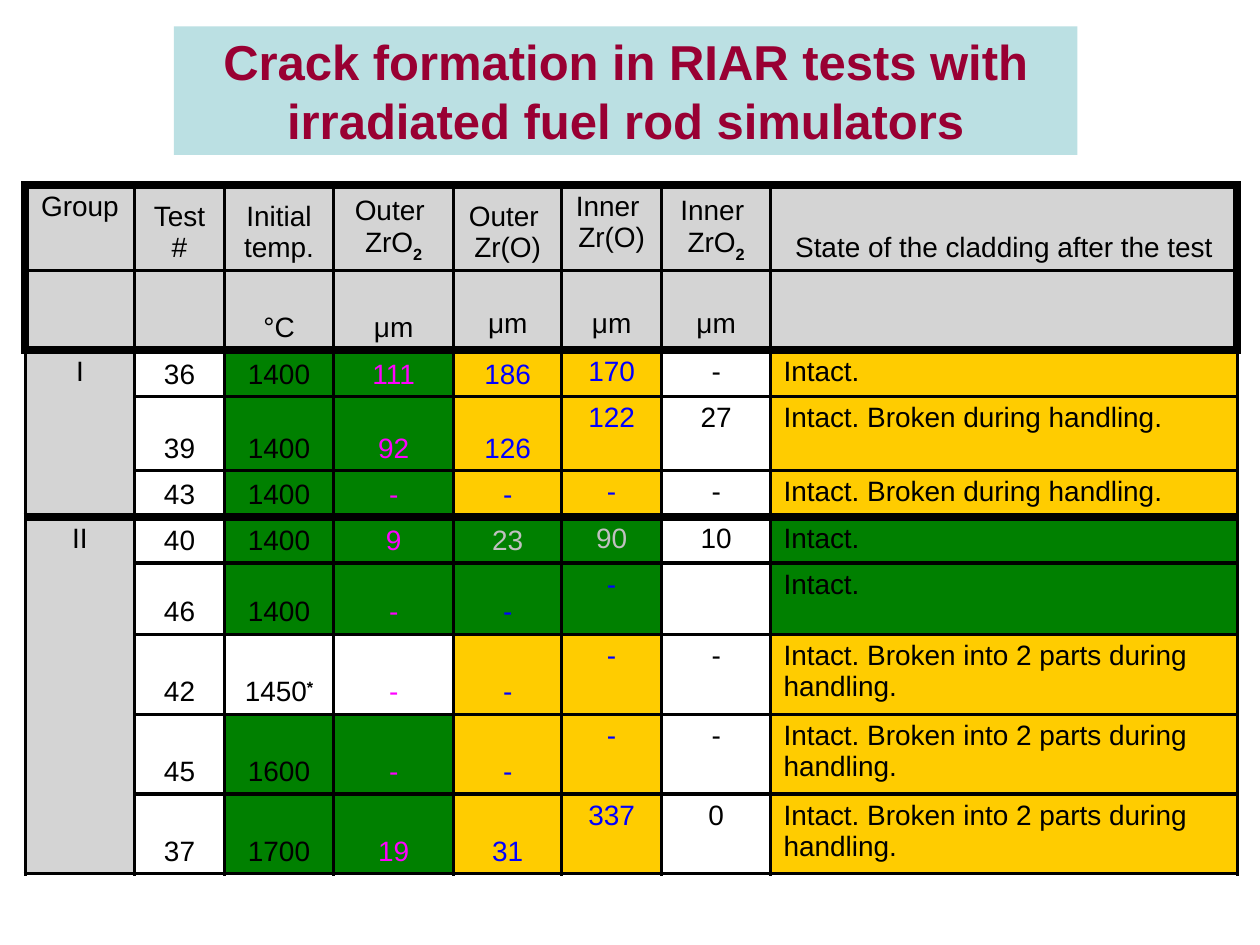
from lxml import etree
from pptx import Presentation
from pptx.dml.color import RGBColor
from pptx.enum.text import MSO_ANCHOR, MSO_AUTO_SIZE, PP_ALIGN
from pptx.oxml.ns import qn
from pptx.util import Pt

TOP, MIDDLE, BOTTOM = MSO_ANCHOR.TOP, MSO_ANCHOR.MIDDLE, MSO_ANCHOR.BOTTOM
LEFT, CENTER = PP_ALIGN.LEFT, PP_ALIGN.CENTER
NO_AUTOFIT = MSO_AUTO_SIZE.NONE
TITLE_ONLY = 5

COLORS = {
    "black": "000000", "maroon": "990033", "pale": "BBE0E3", "grey": "D4D4D4",
    "green": "008000", "amber": "FFCC00", "magenta": "FF00FF",
    "blue": "0000FF", "silver": "C0C0C0",
}
TITLE_FONT = {"name": "Arial", "size": Pt(28), "bold": True}
CELL_FONT = {"name": "Arial", "size": Pt(16), "bold": False}
SCRIPT_FONT = {**CELL_FONT, "bold": True}
BASELINES = {"2": "-30000", "*": "30000"}

COLUMN_WIDTHS = [62.64, 51.12, 62.64, 68.4, 61.92, 56.88, 62.64, 266.4]
ROW_HEIGHTS = [48.6, 45.7, 26.4, 42.3, 26.6, 26.4, 40.6, 45.7, 45.7, 45.7]
GROUP_SPANS = [(2, 4), (5, 9)]
THIN, THICK = 2, 5
THICK_BELOW = {1, 4}  # end of the header and end of group I
UNIT_TOP_MARGIN = 22

# "|" separates a sub- or superscript from its base
HANDLING = "Intact. Broken during handling."
TWO_PARTS = "Intact. Broken into 2 parts during handling."
ROWS = [
    ["Group", "Test #", "Initial temp.", "Outer \nZrO|2", "Outer \nZr(O)",
     "Inner \nZr(O)", "Inner \nZrO|2", "State of the cladding after the test"],
    ["", "", "°С", "μm", "μm", "μm", "μm", ""],
    ["I", "36", "1400", "111", "186", "170", "-", "Intact."],
    ["", "39", "1400", "92", "126", "122", "27", HANDLING],
    ["", "43", "1400", "-", "-", "-", "-", HANDLING],
    ["II", "40", "1400", "9", "23", "90", "10", "Intact."],
    ["", "46", "1400", "-", "-", "-", "", "Intact."],
    ["", "42", "1450|*", "-", "-", "-", "-", TWO_PARTS],
    ["", "45", "1600", "-", "-", "-", "-", TWO_PARTS],
    ["", "37", "1700", "19", "31", "337", "0", TWO_PARTS],
]

# Fill of each column in a test row; None is an unfilled cell
USUAL_FILLS = ["grey", None, "green", "green", "amber", "amber", None, "amber"]
INTACT_FILLS = ["grey", None, "green", "green", "green", "green", None, "green"]
UNOXIDISED_FILLS = ["grey", None, None, None, "amber", "amber", None, "amber"]
SPECIAL_FILLS = {0: ["grey"] * 8, 1: ["grey"] * 8, 5: INTACT_FILLS,
                 6: INTACT_FILLS, 7: UNOXIDISED_FILLS}
TEST_INKS = {3: "magenta", 4: "blue", 5: "blue"}
SILVER_CELLS = {(5, 4), (5, 5)}


def rgb(color):
    return RGBColor.from_string(COLORS[color])


def add_run(paragraph, text, font_format, color):
    run = paragraph.add_run()
    run.text = text
    for attribute, value in font_format.items():
        setattr(run.font, attribute, value)
    run.font.color.rgb = rgb(color)
    return run


def place_title(slide):
    title = slide.shapes.title
    box = {"left": 99.4, "top": 15.1, "width": 516.2, "height": 73.4}
    for attribute, value in box.items():
        setattr(title, attribute, Pt(value))
    title.fill.solid()
    title.fill.fore_color.rgb = rgb("pale")
    frame = title.text_frame
    frame_format = {"auto_size": NO_AUTOFIT, "word_wrap": True,
                    "vertical_anchor": MIDDLE}
    for attribute, value in frame_format.items():
        setattr(frame, attribute, value)
    paragraph = frame.paragraphs[0]
    paragraph.alignment, paragraph.line_spacing = CENTER, 1.0
    add_run(paragraph,
            "Crack formation in RIAR tests with irradiated fuel rod simulators",
            TITLE_FONT, "maroon")


def set_borders(cell, row, column):
    in_header = row < 2
    widths = {
        "L": THICK if in_header and column == 0 else THIN,
        "R": THICK if in_header and column == 7 else THIN,
        "T": THICK if row == 0 or row - 1 in THICK_BELOW else THIN,
        "B": THICK if row in THICK_BELOW else THIN,
    }
    properties = cell._tc.get_or_add_tcPr()
    for side, width in widths.items():
        line = etree.SubElement(properties, qn(f"a:ln{side}"), w=str(Pt(width)))
        fill = etree.SubElement(line, qn("a:solidFill"))
        etree.SubElement(fill, qn("a:srgbClr"), val=COLORS["black"])


def set_fill(cell, row, column):
    color = SPECIAL_FILLS.get(row, USUAL_FILLS)[column]
    if color:
        cell.fill.solid()
        cell.fill.fore_color.rgb = rgb(color)
    else:
        cell.fill.background()


def anchor_for(row, column):
    if row == 0:
        return TOP if column in (0, 5) else BOTTOM
    return BOTTOM if column in (1, 2, 3) or (column == 4 and row > 1) else TOP


def ink_for(row, column):
    if (row, column) in SILVER_CELLS:
        return "silver"
    return TEST_INKS.get(column, "black") if row > 1 else "black"


def write_cell(cell, row, column, text):
    cell.vertical_anchor = anchor_for(row, column)
    if row == 1 and column in (4, 5, 6):
        cell.margin_top = Pt(UNIT_TOP_MARGIN)
    ink = ink_for(row, column)
    frame = cell.text_frame
    for index, line in enumerate(text.split("\n")):
        paragraph = frame.add_paragraph() if index else frame.paragraphs[0]
        paragraph.alignment = LEFT if column == 7 and row > 1 else CENTER
        paragraph.font.size = CELL_FONT["size"]
        base, _, script = line.partition("|")
        if base:
            add_run(paragraph, base, CELL_FONT, ink)
        if script:
            run = add_run(paragraph, script, SCRIPT_FONT, ink)
            run.font._element.set("baseline", BASELINES[script])


def add_results_table(slide):
    table = slide.shapes.add_table(
        len(ROWS), len(COLUMN_WIDTHS), Pt(14.4), Pt(105.8),
        Pt(sum(COLUMN_WIDTHS)), Pt(sum(ROW_HEIGHTS))).table
    table.first_row = table.horz_banding = False
    for column, width in zip(table.columns, COLUMN_WIDTHS):
        column.width = Pt(width)
    for row, height in zip(table.rows, ROW_HEIGHTS):
        row.height = Pt(height)
    for first, last in GROUP_SPANS:
        table.cell(first, 0).merge(table.cell(last, 0))
    # Borders come before the fill in the cell properties
    for row, texts in enumerate(ROWS):
        for column, text in enumerate(texts):
            cell = table.cell(row, column)
            set_borders(cell, row, column)
            set_fill(cell, row, column)
            write_cell(cell, row, column, text)
    # A merged group cell takes its lower border from its last row
    for first, last in GROUP_SPANS:
        width = THICK if last in THICK_BELOW else THIN
        properties = table.cell(first, 0)._tc.tcPr
        properties.find(qn("a:lnB")).set("w", str(Pt(width)))


def main():
    presentation = Presentation()
    presentation.slide_width, presentation.slide_height = Pt(720), Pt(540)
    slide = presentation.slides.add_slide(presentation.slide_layouts[TITLE_ONLY])
    place_title(slide)
    add_results_table(slide)
    presentation.save("out.pptx")


if __name__ == "__main__":
    main()
